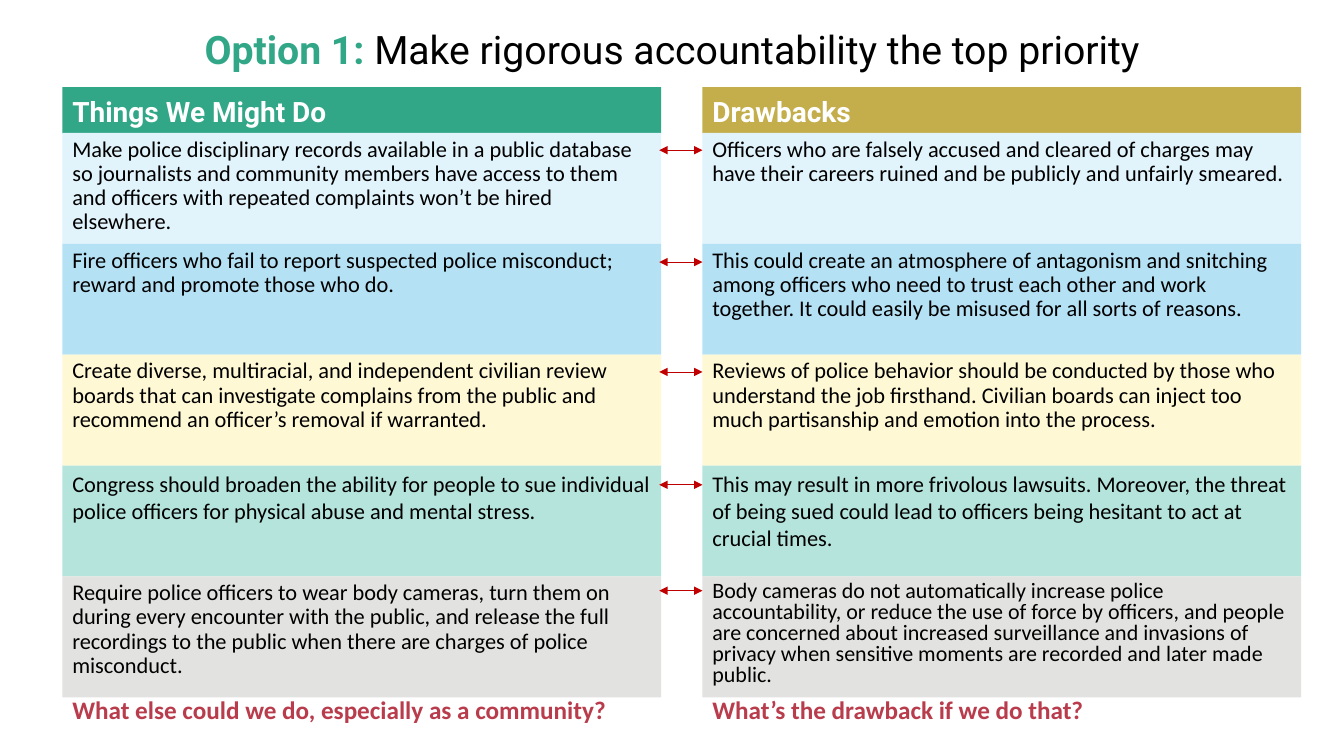
import pptx
import pptx.dml.color
import pptx.enum.shapes
import pptx.enum.text
import pptx.oxml
import pptx.oxml.ns
import pptx.util

Pt = pptx.util.Pt
RGBColor = pptx.dml.color.RGBColor
Anchor = pptx.enum.text.MSO_ANCHOR
Align = pptx.enum.text.PP_ALIGN

GREEN = RGBColor(0x31, 0xA7, 0x87)
GOLD = RGBColor(0xC4, 0xAE, 0x4C)
PALE_BLUE = RGBColor(0xE1, 0xF3, 0xFB)
BLUE = RGBColor(0xB5, 0xE1, 0xF5)
YELLOW = RGBColor(0xFE, 0xF8, 0xD4)
MINT = RGBColor(0xB4, 0xE4, 0xDC)
GREY = RGBColor(0xE2, 0xE2, 0xE0)
CRIMSON = RGBColor(0xB9, 0x3C, 0x4C)
ARROW_RED = RGBColor(0xC0, 0x00, 0x00)
BLACK = RGBColor(0, 0, 0)
WHITE = RGBColor(0xFF, 0xFF, 0xFF)

ACTIONS_LEFT, DRAWBACKS_LEFT, COLUMN_WIDTH = 44.6, 501.8, 427.7
HEADER_TOP, HEADER_HEIGHT = 62.3, 33
ROWS_TOP, ROW_HEIGHT, LAST_ROW_HEIGHT = 95, 79.2, 86.4
QUESTION_TOP, QUESTION_HEIGHT = 492.5, 29

ROW_COLOURS = [PALE_BLUE, BLUE, YELLOW, MINT, GREY]
ARROW_OFFSETS = [12.3, 13, 12.3, 13.7, 10.1]

ACTIONS = [
    "Make police disciplinary records available in a public database so journalists and "
    "community members have access to them and officers with repeated complaints won’t be "
    "hired elsewhere.",
    "Fire officers who fail to report suspected police misconduct; reward and promote those "
    "who do.",
    "Create diverse, multiracial, and independent civilian review boards that can investigate "
    "complains from the public and recommend an officer’s removal if warranted.",
    "Congress should broaden the ability for people to sue individual police officers for "
    "physical abuse and mental stress.",
    "Require police officers to wear body cameras, turn them on during every encounter with "
    "the public, and release the full recordings to the public when there are charges of "
    "police misconduct.",
]
DRAWBACKS = [
    "Officers who are falsely accused and cleared of charges may have their careers ruined "
    "and be publicly and unfairly smeared.",
    "This could create an atmosphere of antagonism and snitching among officers who need to "
    "trust each other and work together. It could easily be misused for all sorts of reasons.",
    "Reviews of police behavior should be conducted by those who understand the job "
    "firsthand. Civilian boards can inject too much partisanship and emotion into the process.",
    "This may result in more frivolous lawsuits. Moreover, the threat of being sued could "
    "lead to officers being hesitant to act at crucial times.",
    "Body cameras do not automatically increase police accountability, or reduce the use of "
    "force by officers, and people are concerned about increased surveillance and invasions "
    "of privacy when sensitive moments are recorded and later made public.",
]
# Text size and line spacing of each row
ACTION_STYLES = [(16, 0.9), (16, 0.9), (16, 0.9), (16, 1), (16, 0.9)]
DRAWBACK_STYLES = ACTION_STYLES[:4] + [(15.7, 0.8)]


def format_run(run, font_name, size, colour, bold=False):
    run.font.name = font_name
    run.font.size = Pt(size)
    run.font.color.rgb = colour
    run.font.bold = bold


def add_band(slide, left, top, height, fill, text, anchor=Anchor.TOP, spacing=0.9):
    """Add a column-wide text band, without a fill if none is given; return its run."""
    box = [Pt(value) for value in (left, top, COLUMN_WIDTH, height)]
    if fill is None:
        shape = slide.shapes.add_textbox(*box)
    else:
        shape = slide.shapes.add_shape(pptx.enum.shapes.MSO_SHAPE.RECTANGLE, *box)
        shape.shadow.inherit = False
        shape.fill.solid()
        shape.fill.fore_color.rgb = fill
        shape.line.fill.background()
    shape.text_frame.word_wrap = True
    shape.text_frame.vertical_anchor = anchor
    shape.text_frame.text = text
    paragraph = shape.text_frame.paragraphs[0]
    paragraph.alignment = Align.LEFT
    paragraph.line_spacing = spacing
    return paragraph.runs[0]


def add_title(slide, left, top, width, height):
    shape = slide.shapes.add_textbox(Pt(left), Pt(top), Pt(width), Pt(height))
    shape.text_frame.word_wrap = True
    shape.text_frame.vertical_anchor = Anchor.MIDDLE
    paragraph = shape.text_frame.paragraphs[0]
    paragraph.alignment = Align.CENTER
    paragraph.line_spacing = 0.9
    paragraph.text = "Option 1: "
    format_run(paragraph.runs[0], "Roboto", 28, GREEN, True)
    topic = paragraph.add_run()
    topic.text = "Make rigorous accountability the top priority"
    format_run(topic, "Roboto", 28, BLACK)


def add_column(slide, left, heading, heading_fill, entries, styles, question):
    run = add_band(slide, left, HEADER_TOP, HEADER_HEIGHT, heading_fill, heading, Anchor.BOTTOM)
    format_run(run, "Roboto", 20, WHITE, True)
    for index, (entry, (size, spacing)) in enumerate(zip(entries, styles)):
        top = ROWS_TOP + index * ROW_HEIGHT
        height = LAST_ROW_HEIGHT if index == len(entries) - 1 else ROW_HEIGHT
        run = add_band(slide, left, top, height, ROW_COLOURS[index], entry, spacing=spacing)
        format_run(run, "Calibri", size, BLACK)
    run = add_band(slide, left, QUESTION_TOP, QUESTION_HEIGHT, None, question, spacing=1)
    format_run(run, "Calibri", 18, CRIMSON, True)


def add_row_arrows(slide, left, right):
    """Link each action to its drawback with a double-headed arrow."""
    for index, offset in enumerate(ARROW_OFFSETS):
        y = Pt(ROWS_TOP + index * ROW_HEIGHT + offset)
        arrow = slide.shapes.add_connector(
            pptx.enum.shapes.MSO_CONNECTOR.STRAIGHT, Pt(left), y, Pt(right), y)
        arrow.line.color.rgb = ARROW_RED
        arrow.line.width = Pt(0.5)
        line = arrow.line._get_or_add_ln()
        for tag in ("a:headEnd", "a:tailEnd"):
            end = pptx.oxml.ns.qn(tag)
            line.append(line.makeelement(end, {"type": "triangle"}))
        properties = arrow._element.spPr
        properties.append(properties.makeelement(pptx.oxml.ns.qn("a:effectLst"), {}))


def main():
    presentation = pptx.Presentation()
    presentation.slide_width = Pt(960)
    presentation.slide_height = Pt(540)
    slide = presentation.slides.add_slide(presentation.slide_layouts[6])
    add_title(slide, 66, 11.5, 828, 50.4)
    add_column(slide, ACTIONS_LEFT, "Things We Might Do", GREEN, ACTIONS, ACTION_STYLES,
               "What else could we do, especially as a community?")
    add_column(slide, DRAWBACKS_LEFT, "Drawbacks", GOLD, DRAWBACKS, DRAWBACK_STYLES,
               "What’s the drawback if we do that?")
    add_row_arrows(slide, 470.9, DRAWBACKS_LEFT)
    presentation.save("out.pptx")


if __name__ == "__main__":
    main()
